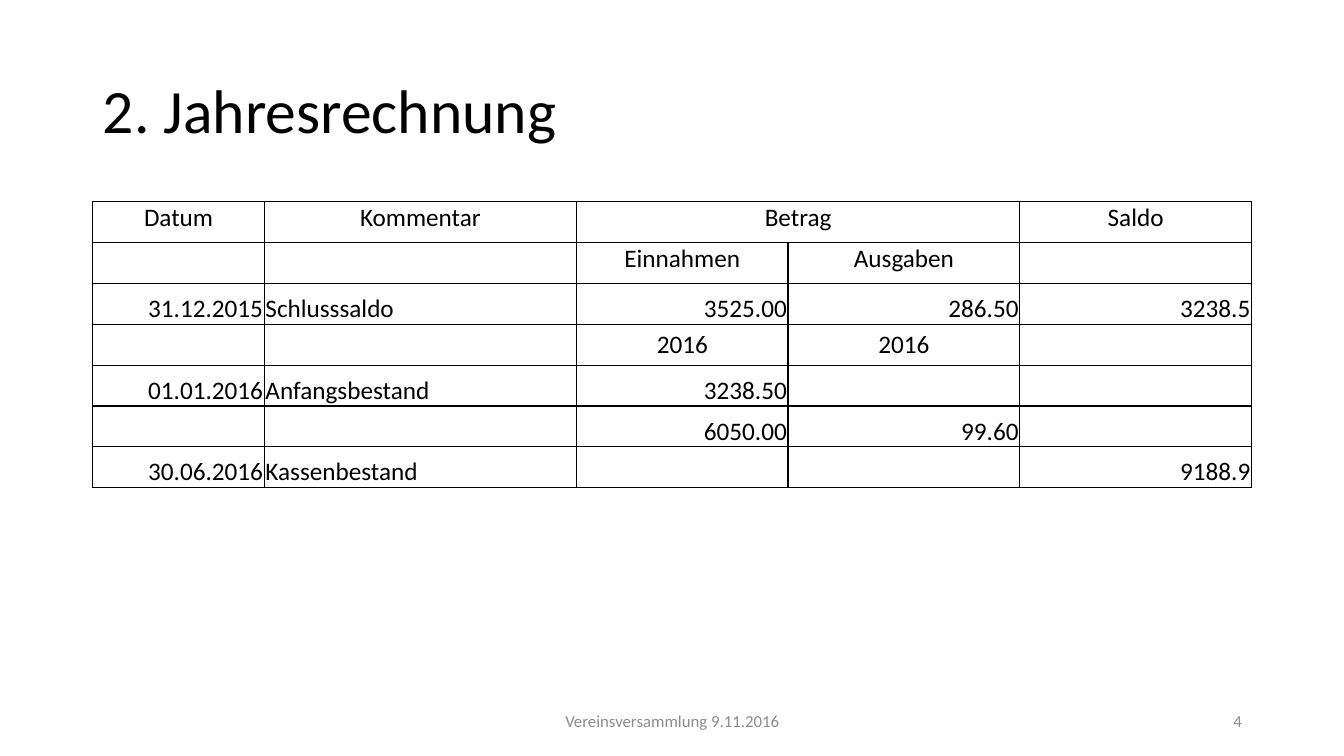
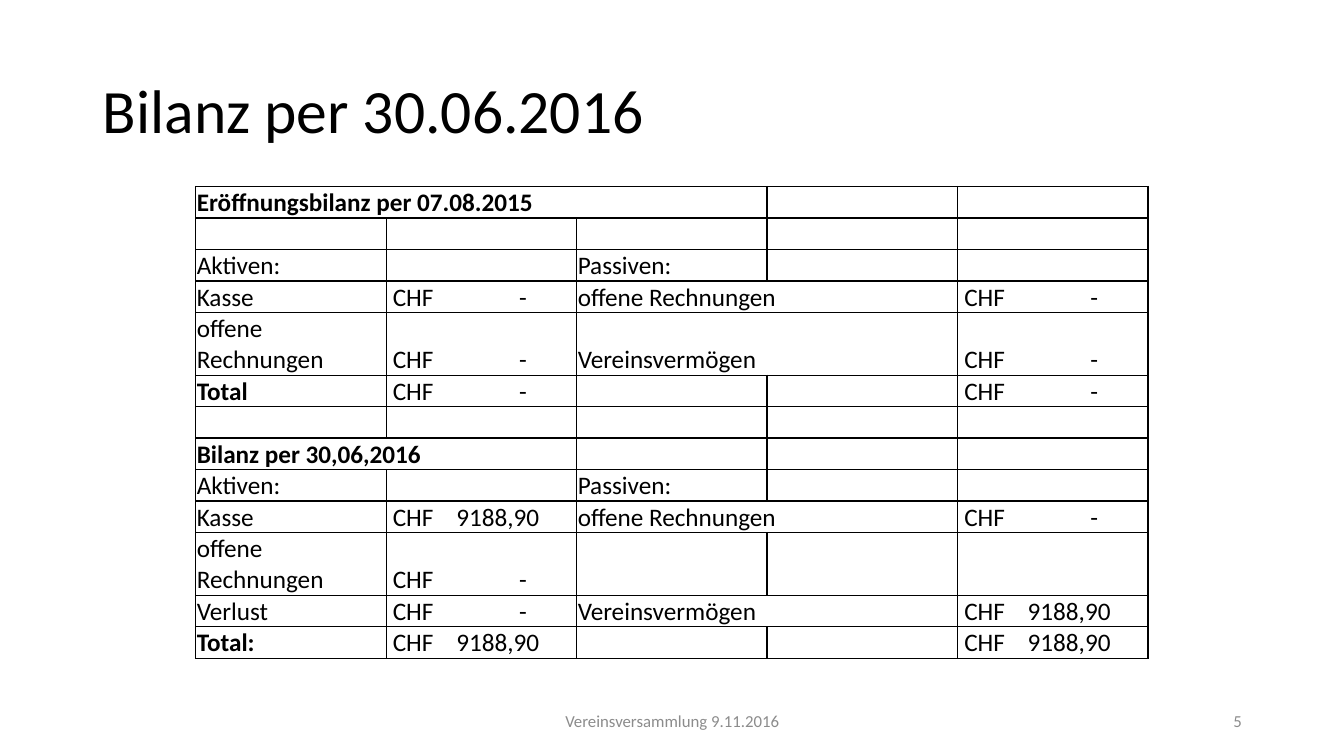
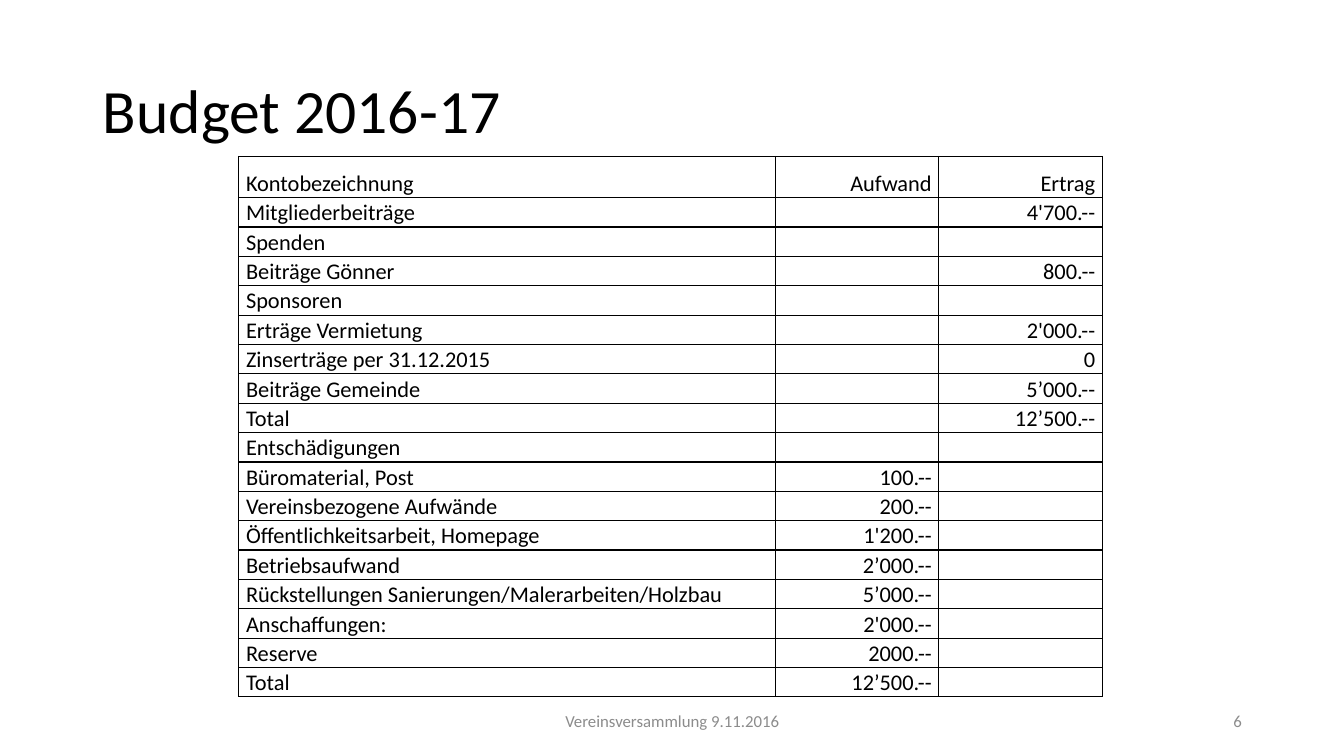
from lxml import etree
from pptx import Presentation
from pptx.dml.color import RGBColor
from pptx.enum import text as t
from pptx.oxml.ns import qn
from pptx.util import Cm, Pt

# Shared look
FONT = "Calibri"
BLACK = RGBColor(0x00, 0x00, 0x00)
GREY = RGBColor(0x8C, 0x8C, 0x8C)
LEFT, CENTER, RIGHT = t.PP_ALIGN.LEFT, t.PP_ALIGN.CENTER, t.PP_ALIGN.RIGHT
TOP, MIDDLE, BOTTOM = t.MSO_ANCHOR.TOP, t.MSO_ANCHOR.MIDDLE, t.MSO_ANCHOR.BOTTOM
TITLE_ONLY = 5
FOOTER = "Vereinsversammlung 9.11.2016"
FIRST_NUMBER = 4

# Cell insets (left, top, right, bottom) in cm
TIGHT = (0.03, 0.03, 0.03, 0)
MONEY = (0.17, 0.03, 0.03, 0)
WIDE = (0.18, 0, 0.18, 0)

# Tab stops in cm for a dash and for an amount after the currency
DASH_TAB, AMOUNT_TAB = 3.18, 1.6
NIL = "CHF\t-"
FUNDS = "CHF\t9188,90"

# Table contents; None continues the cell to its left
ACCOUNTS = [
    ["Datum", "Kommentar", "Betrag", None, "Saldo"],
    ["", "", "Einnahmen", "Ausgaben", ""],
    ["31.12.2015", "Schlusssaldo", "3525.00", "286.50", "3238.5"],
    ["", "", "2016", "2016", ""],
    ["01.01.2016", "Anfangsbestand", "3238.50", "", ""],
    ["", "", "6050.00", "99.60", ""],
    ["30.06.2016", "Kassenbestand", "", "", "9188.9"],
]
BALANCE = [
    ["Eröffnungsbilanz per 07.08.2015", None, None, "", ""],
    ["", "", "", "", ""],
    ["Aktiven:", "", "Passiven:", "", ""],
    ["Kasse", NIL, "offene Rechnungen", None, NIL],
    ["offene Rechnungen", NIL, "Vereinsvermögen", None, NIL],
    ["Total", NIL, "", "", NIL],
    ["", "", "", "", ""],
    ["Bilanz per 30,06,2016", None, "", "", ""],
    ["Aktiven:", "", "Passiven:", "", ""],
    ["Kasse", FUNDS, "offene Rechnungen", None, NIL],
    ["offene Rechnungen", NIL, "", "", ""],
    ["Verlust", NIL, "Vereinsvermögen", None, FUNDS],
    ["Total:", FUNDS, "", "", FUNDS],
]
BUDGET = [
    ["Kontobezeichnung", "Aufwand", "Ertrag"],
    ["Mitgliederbeiträge", "", "4'700.--"],
    ["Spenden", "", ""],
    ["Beiträge Gönner", "", "800.--"],
    ["Sponsoren", "", ""],
    ["Erträge Vermietung", "", "2'000.--"],
    ["Zinserträge per 31.12.2015", "", "0"],
    ["Beiträge Gemeinde", "", "5’000.--"],
    ["Total", "", "12’500.--"],
    ["Entschädigungen", "", ""],
    ["Büromaterial, Post", "100.--", ""],
    ["Vereinsbezogene Aufwände", "200.--", ""],
    ["Öffentlichkeitsarbeit, Homepage", "1'200.--", ""],
    ["Betriebsaufwand", "2’000.--", ""],
    ["Rückstellungen Sanierungen/Malerarbeiten/Holzbau", "5’000.--", ""],
    ["Anschaffungen:", "2'000.--", ""],
    ["Reserve", "2000.--", ""],
    ["Total", "12’500.--", ""],
]


def put_text(frame, content, size=18, color=BLACK, bold=False, align=LEFT,
             spacing=None, tab=None):
    """Write one formatted paragraph into a text frame."""
    paragraph = frame.paragraphs[0]
    paragraph.alignment = align
    if spacing:
        paragraph.line_spacing = spacing
    if tab:
        stops = etree.SubElement(paragraph._p.get_or_add_pPr(), qn("a:tabLst"))
        etree.SubElement(stops, qn("a:tab"), pos=str(Cm(tab)), algn="l")
    if content:
        run = paragraph.add_run()
        run.text = content
        run.font.name, run.font.size, run.font.bold = FONT, Pt(size), bold
        run.font.color.rgb = color
    else:
        etree.SubElement(paragraph._p, qn("a:endParaRPr"), sz=str(size * 100))


def add_footer_part(slide, content, left, width, align):
    box = slide.shapes.add_textbox(Cm(left), Cm(17.65), Cm(width), Cm(1.02))
    box.text_frame.word_wrap = True
    box.text_frame.vertical_anchor = MIDDLE
    put_text(box.text_frame, content, size=12, color=GREY, align=align)


def add_page(prs, heading):
    """Add a slide with title, footer and number."""
    slide = prs.slides.add_slide(prs.slide_layouts[TITLE_ONLY])
    title = slide.shapes.title
    title.left, title.top, title.width, title.height = (
        Cm(2.34), Cm(1.02), Cm(24.69), Cm(3.68))
    title.text_frame.vertical_anchor = MIDDLE
    put_text(title.text_frame, heading, size=44, spacing=0.9)
    number = FIRST_NUMBER + len(prs.slides) - 1
    add_footer_part(slide, FOOTER, 11.23, 11.43, CENTER)
    add_footer_part(slide, str(number), 23.93, 7.62, RIGHT)
    return slide


def add_borders(cell):
    properties = cell._tc.get_or_add_tcPr()
    for position, side in enumerate(("lnL", "lnR", "lnT", "lnB")):
        line = etree.Element(qn(f"a:{side}"), w=str(Pt(1)))
        fill = etree.SubElement(line, qn("a:solidFill"))
        etree.SubElement(fill, qn("a:srgbClr"), val=str(BLACK))
        properties.insert(position, line)


def add_grid(slide, rows, left, top, widths, heights, style):
    """Add a ruled table; style(row, column, content) gives a cell's format."""
    table = slide.shapes.add_table(
        len(rows), len(widths), Cm(left), Cm(top),
        Cm(sum(widths)), Cm(sum(heights))).table
    table.first_row = table.horz_banding = False
    for column, width in zip(table.columns, widths):
        column.width = Cm(width)
    for r, (contents, height) in enumerate(zip(rows, heights)):
        table.rows[r].height = Cm(height)
        for c, content in enumerate(contents):
            cell = table.cell(r, c)
            look = style(r, c, content or "")
            insets = [Cm(inset) for inset in look.pop("insets")]
            (cell.margin_left, cell.margin_top,
             cell.margin_right, cell.margin_bottom) = insets
            cell.vertical_anchor = look.pop("anchor", TOP)
            cell.fill.background()
            add_borders(cell)
            put_text(cell.text_frame, content, **look)
        # Merge each cell with the None entries after it
        for c, content in enumerate(contents):
            end = c
            while end + 1 < len(contents) and contents[end + 1] is None:
                end += 1
            if content is not None and end > c:
                table.cell(r, c).merge(table.cell(r, end))


def account_style(row, column, content):
    if row < 2:
        return dict(insets=TIGHT, align=CENTER)
    if content == "2016":
        return dict(insets=TIGHT, align=CENTER, anchor=MIDDLE)
    return dict(insets=TIGHT, align=LEFT if column == 1 else RIGHT, anchor=BOTTOM)


def balance_style(row, column, content):
    look = dict(insets=TIGHT, anchor=BOTTOM,
                bold="bilanz" in content.lower() or content.startswith("Total"))
    if content.startswith("CHF"):
        look.update(insets=MONEY, tab=DASH_TAB if content == NIL else AMOUNT_TAB)
    return look


def budget_style(row, column, content):
    return dict(insets=WIDE, size=16, align=RIGHT if column else LEFT,
                spacing=1.07 if row else 1.5)


def main():
    prs = Presentation()
    prs.slide_width, prs.slide_height = Cm(33.87), Cm(19.05)

    # Annual accounts
    add_grid(add_page(prs, "2. Jahresrechnung"), ACCOUNTS, 2.34, 5.08,
             [4.32, 7.87, 5.33, 5.84, 5.84], [1.03] * len(ACCOUNTS), account_style)

    # Balance sheet: rows with a wrapped label are twice as high
    heights = [1.58 if row[0] == "offene Rechnungen" else 0.79 for row in BALANCE]
    add_grid(add_page(prs, "Bilanz per 30.06.2016"), BALANCE, 4.93, 4.7,
             [4.8] * 5, heights, balance_style)

    # Budget
    add_grid(add_page(prs, "Budget 2016-17"), BUDGET, 6.02, 3.94,
             [13.52, 4.12, 4.12], [1.04] + [0.74] * (len(BUDGET) - 1), budget_style)

    prs.save("out.pptx")


if __name__ == "__main__":
    main()
